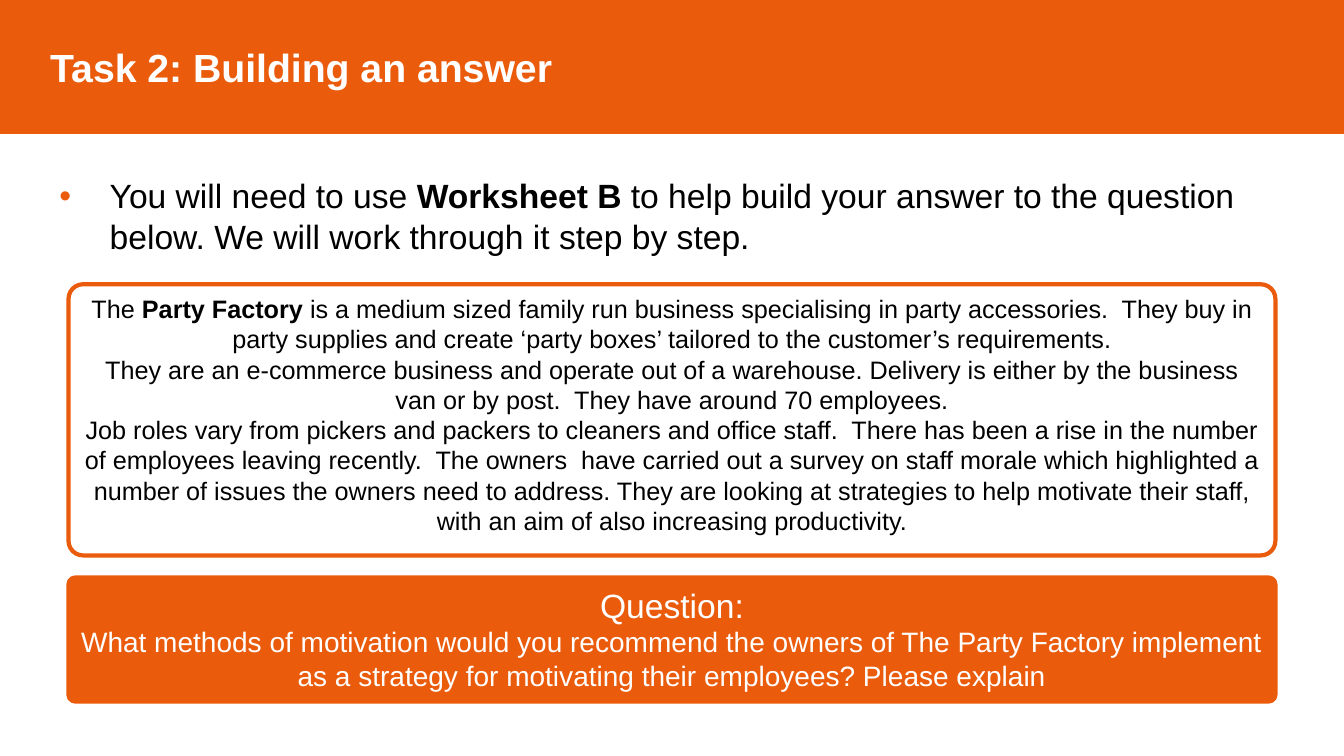
from dataclasses import dataclass

from lxml.etree import SubElement
from pptx import Presentation
from pptx.dml.color import RGBColor
from pptx.enum.shapes import MSO_SHAPE
from pptx.enum.text import MSO_ANCHOR, PP_ALIGN
from pptx.oxml.ns import qn
from pptx.util import Pt

EMU_PER_PX = 9144  # 100 px to the inch
ORANGE, WHITE, BLACK = "EA5B0C", "FFFFFF", "000000"
FONT = "Arial"


@dataclass
class Span:
    text: str
    bold: bool = False


@dataclass
class Para:
    spans: list[Span]
    size: int


@dataclass
class Panel:
    left: int
    top: int
    width: int
    height: int
    paras: list[Para]
    text_color: str
    fill: str | None = ORANGE
    line_width: int = 3
    shape: MSO_SHAPE = MSO_SHAPE.ROUNDED_RECTANGLE
    align: PP_ALIGN = PP_ALIGN.CENTER
    anchor: MSO_ANCHOR = MSO_ANCHOR.TOP


def px(length: int) -> int:
    return length * EMU_PER_PX


def color(value: str) -> RGBColor:
    return RGBColor.from_string(value)


def write_text(frame, paras: list[Para], text_color: str, align: PP_ALIGN) -> None:
    frame.word_wrap = True
    for index, para in enumerate(paras):
        paragraph = frame.add_paragraph() if index else frame.paragraphs[0]
        paragraph.alignment = align
        for span in para.spans:
            run = paragraph.add_run()
            run.text = span.text
            run.font.name = FONT
            run.font.size = Pt(para.size)
            run.font.bold = span.bold
            run.font.color.rgb = color(text_color)


def indent(paragraph, margin: int, first_line: int = 0) -> None:
    properties = paragraph._p.get_or_add_pPr()
    properties.set("marL", str(px(margin)))
    properties.set("indent", str(px(first_line)))


def add_bullet(paragraph, bullet_color: str) -> None:
    properties = paragraph._p.get_or_add_pPr()
    tint = SubElement(properties, qn("a:buClr"))
    SubElement(tint, qn("a:srgbClr"), val=bullet_color)
    SubElement(properties, qn("a:buFont"), typeface=FONT)
    SubElement(properties, qn("a:buChar"), char="•")


def add_panel(page, panel: Panel):
    box = page.shapes.add_shape(
        panel.shape, px(panel.left), px(panel.top), px(panel.width), px(panel.height)
    )
    box.shadow.inherit = False
    if panel.shape == MSO_SHAPE.ROUNDED_RECTANGLE:
        box.adjustments[0] = 0.054
    if panel.fill:
        box.fill.solid()
        box.fill.fore_color.rgb = color(panel.fill)
    else:
        box.fill.background()
    box.line.color.rgb = color(ORANGE)
    box.line.width = Pt(panel.line_width)
    box.text_frame.vertical_anchor = panel.anchor
    write_text(box.text_frame, panel.paras, panel.text_color, panel.align)
    return box


TITLE = Panel(
    0, 0, 1333, 132, [Para([Span("Task 2: Building an answer", True)], 28)], WHITE,
    line_width=1, shape=MSO_SHAPE.RECTANGLE, align=PP_ALIGN.LEFT, anchor=MSO_ANCHOR.MIDDLE,
)
INSTRUCTION = Para([
    Span("You will need to use "),
    Span("Worksheet B ", True),
    Span("to help build your answer to the question below. We will work through it step by step."),
], 24)
QUESTION = Panel(68, 573, 1197, 123, [
    Para([Span("Question:")], 24),
    Para([Span("What methods of motivation would you recommend the owners of The Party Factory "
               "implement as a strategy for motivating their employees? Please explain")], 20),
], WHITE)
CASE_STUDY = Panel(68, 282, 1197, 269, [
    Para([
        Span("The "),
        Span("Party Factory ", True),
        Span("is a medium sized family run business specialising in party accessories.  They buy in "
             "party supplies and create ‘party boxes’ tailored to the customer’s requirements."),
    ], 18),
    Para([Span("They are an e-commerce business and operate out of a warehouse. Delivery is either by "
               "the business van or by post.  They have around 70 employees.")], 18),
    Para([Span("Job roles vary from pickers and packers to cleaners and office staff.  There has been "
               "a rise in the number of employees leaving recently.  The owners  have carried out a "
               "survey on staff morale which highlighted a number of issues the owners need to address. "
               "They are looking at strategies to help motivate their staff, with an aim of also "
               "increasing productivity.")], 18),
], BLACK, fill=None)


def main() -> None:
    deck = Presentation()
    deck.slide_width, deck.slide_height = px(1333), px(750)
    page = deck.slides.add_slide(deck.slide_layouts[6])

    # Title band
    title = add_panel(page, TITLE)
    indent(title.text_frame.paragraphs[0], 40)

    # Bulleted instruction
    box = page.shapes.add_textbox(px(49), px(169), px(1260), px(91))
    write_text(box.text_frame, [INSTRUCTION], BLACK, PP_ALIGN.LEFT)
    paragraph = box.text_frame.paragraphs[0]
    paragraph.space_after = Pt(12)
    indent(paragraph, 50, -50)
    add_bullet(paragraph, ORANGE)

    # Question and case study
    for panel in (QUESTION, CASE_STUDY):
        add_panel(page, panel)

    deck.save("out.pptx")


if __name__ == "__main__":
    main()
